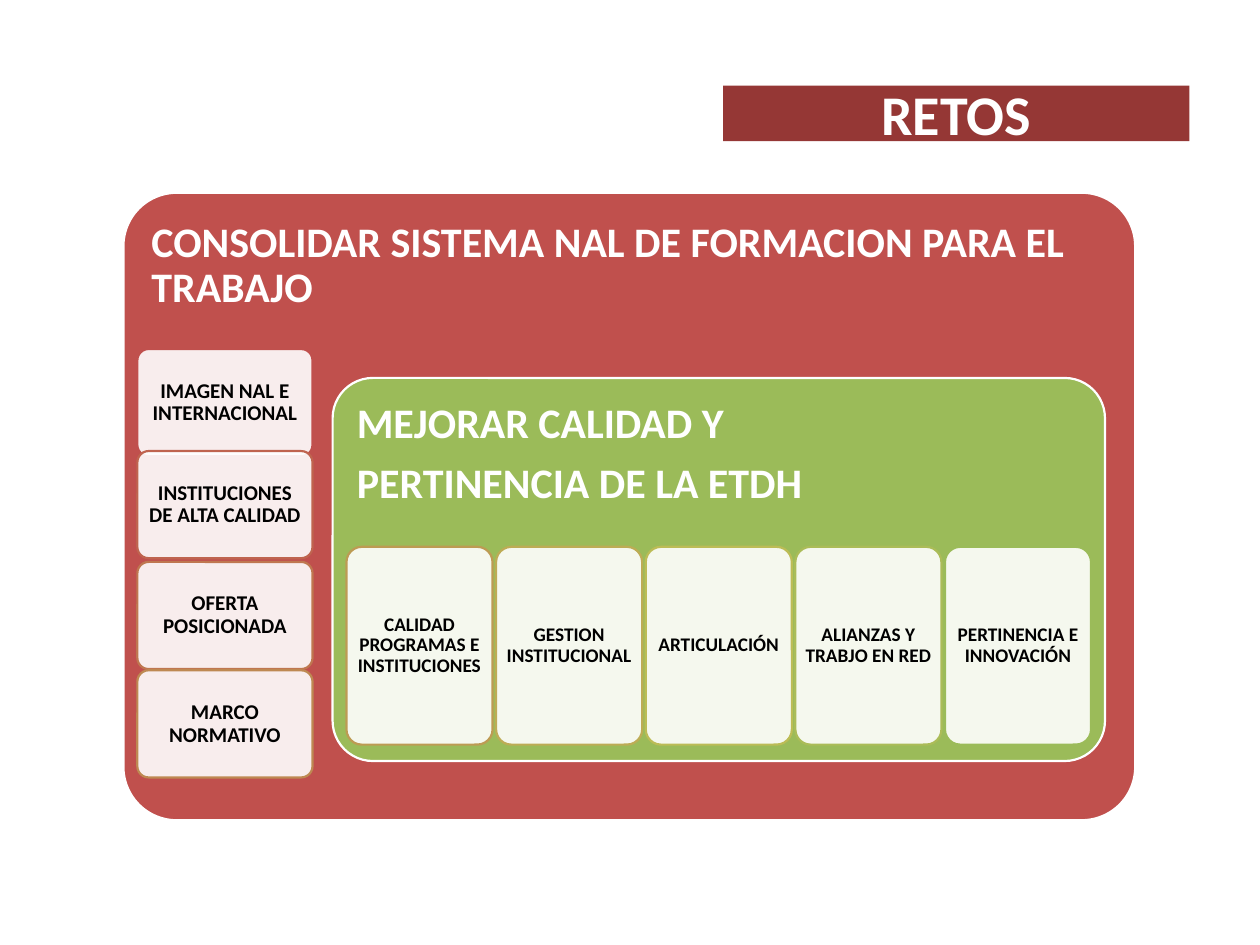
from lxml import etree
from pptx import Presentation
from pptx import util as u
from pptx.dml.color import RGBColor
from pptx.enum import shapes, text
from pptx.oxml.ns import qn

TITLE = "RETOS"
SYSTEM_GOAL = ["CONSOLIDAR SISTEMA NAL DE FORMACION PARA EL TRABAJO"]
QUALITY_GOAL = ["MEJORAR CALIDAD Y", "PERTINENCIA DE LA ETDH"]
SYSTEM_CARDS = [  # top, text, border
    (2.77, "IMAGEN NAL E INTERNACIONAL", "C0504D"),
    (3.58, "INSTITUCIONES DE ALTA CALIDAD", "BF644F"),
    (4.46, "OFERTA POSICIONADA", "BF7750"),
    (5.32, "MARCO NORMATIVO", "BE8952"),
]
QUALITY_CARDS = [  # text, border
    ("CALIDAD PROGRAMAS E INSTITUCIONES", "BD9B53"),
    ("GESTION INSTITUCIONAL", "BDAC55"),
    ("ARTICULACIÓN", "BCBC56"),
    ("ALIANZAS Y TRABJO EN RED", "ABBC58"),
    ("PERTINENCIA E INNOVACIÓN", "9BBB59"),
]
THEME = dict(font="Calibri", white="FFFFFF", black="000000", title_bar="953735",
             red="C0504D", green="9BBB59", title=32, goal=24, side=12, row=11,
             border=1.25, card_alpha=90)

ROUND = shapes.MSO_SHAPE.ROUNDED_RECTANGLE
RECT = shapes.MSO_SHAPE.RECTANGLE


def add_box(s, at, fill, kind=ROUND, adj=0.105, border=None):
    sp = s.shapes.add_shape(kind, *(u.Inches(v) for v in at))
    sp.shadow.inherit = False
    sp.fill.solid()
    sp.fill.fore_color.rgb = RGBColor.from_string(fill)
    if kind == ROUND:
        sp.adjustments[0] = adj
    if border:
        sp.line.color.rgb = RGBColor.from_string(border)
        sp.line.width = u.Pt(THEME["border"])
    else:
        sp.line.fill.background()
    return sp


def write(sp, lines, size, color, inset, align, anchor, spacing=0.9):
    tf = sp.text_frame
    tf.word_wrap = True
    tf.vertical_anchor = anchor
    tf.margin_left = tf.margin_right = u.Inches(inset)
    tf.margin_top = tf.margin_bottom = u.Inches(inset)
    for i, line in enumerate(lines):
        p = tf.add_paragraph() if i else tf.paragraphs[0]
        p.text = line
        p.alignment = align
        p.line_spacing = spacing
        if i:
            p.space_before = u.Pt(size * 0.35)
        p.font.name = THEME["font"]
        p.font.size = u.Pt(size)
        p.font.bold = True
        p.font.color.rgb = RGBColor.from_string(color)


def add_goal(s, at, lines, fill, adj):
    sp = add_box(s, at, fill, adj=adj, border=THEME["white"])
    write(sp, lines, THEME["goal"], THEME["white"], 0.1,
          text.PP_ALIGN.LEFT, text.MSO_ANCHOR.TOP)


def add_card(s, at, label, border, size):
    sp = add_box(s, at, THEME["white"], border=border)
    color = sp.fill._xPr.find(qn("a:solidFill"))[0]
    etree.SubElement(color, qn("a:alpha")).set("val", str(THEME["card_alpha"] * 1000))
    write(sp, [label], size, THEME["black"], 0.03,
          text.PP_ALIGN.CENTER, text.MSO_ANCHOR.MIDDLE)


def main():
    prs = Presentation()
    prs.slide_width, prs.slide_height = u.Inches(10), u.Inches(7.5)
    s = prs.slides.add_slide(prs.slide_layouts[6])

    add_goal(s, (0.98, 1.53, 8.03, 4.98), SYSTEM_GOAL, THEME["red"], 0.085)
    for top, label, border in SYSTEM_CARDS:
        add_card(s, (1.09, top, 1.39, 0.85), label, border, THEME["side"])

    add_goal(s, (2.64, 3, 6.13, 3.04), QUALITY_GOAL, THEME["green"], 0.105)
    first, last, width = 2.75, 7.5, 1.16
    step = (last - first) / (len(QUALITY_CARDS) - 1)
    for i, (label, border) in enumerate(QUALITY_CARDS):
        add_card(s, (first + i * step, 4.34, width, 1.57), label, border, THEME["row"])

    bar = add_box(s, (5.74, 0.68, 3.7, 0.44), THEME["title_bar"], RECT)
    write(bar, [TITLE], THEME["title"], THEME["white"], 0,
          text.PP_ALIGN.CENTER, text.MSO_ANCHOR.MIDDLE, spacing=1.0)

    prs.save("out.pptx")


if __name__ == "__main__":
    main()
